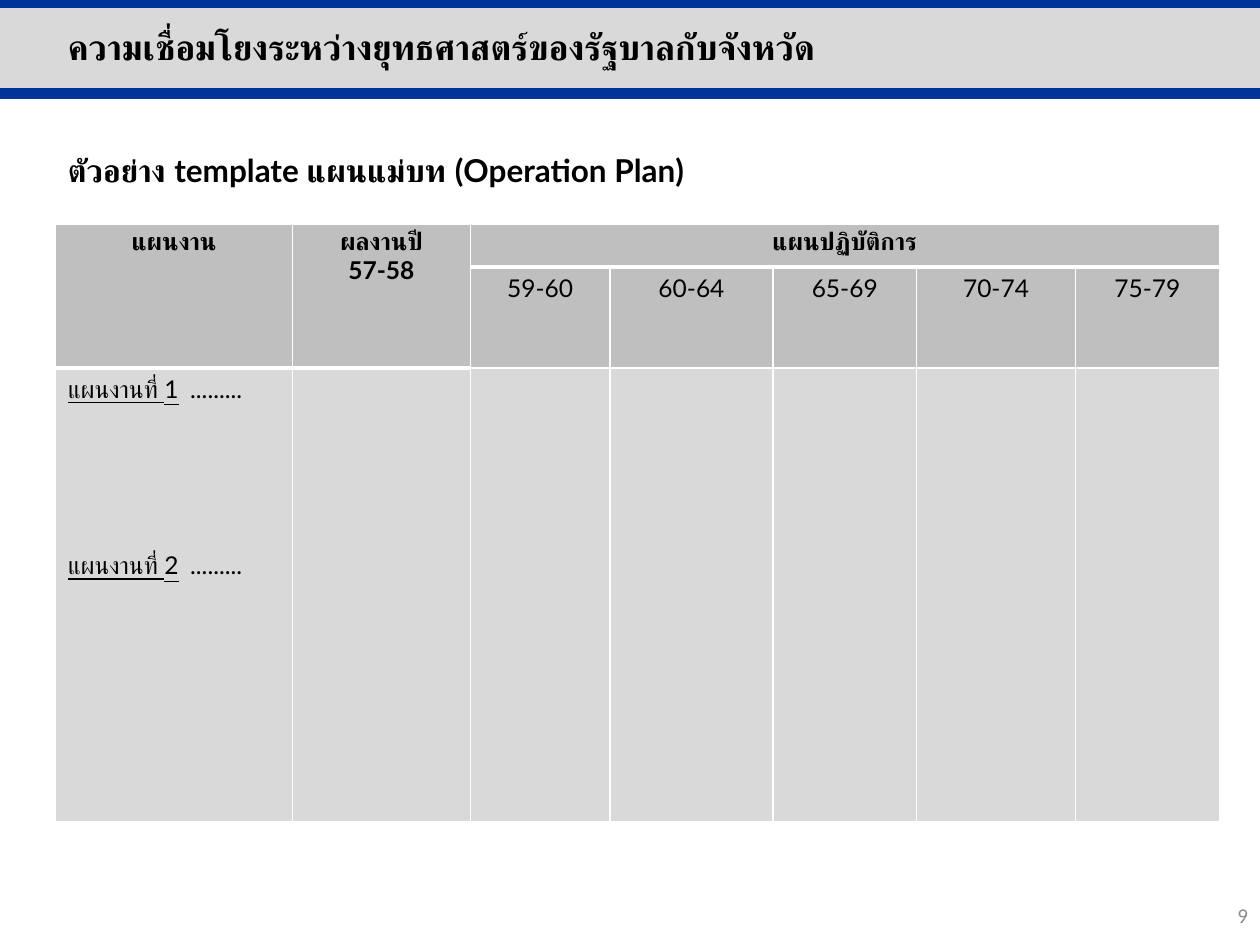
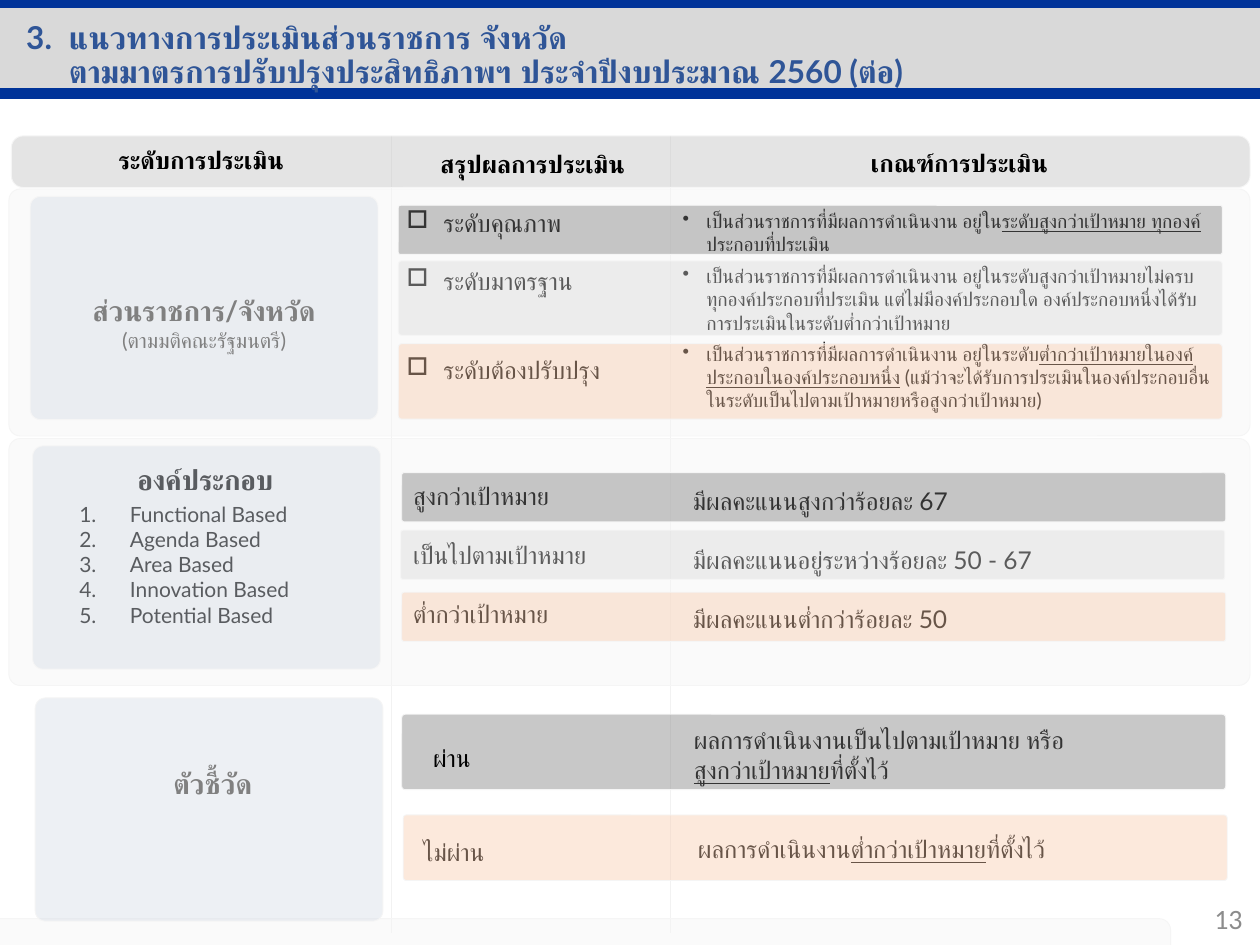
from lxml import etree
from pptx import Presentation
from pptx.dml.color import RGBColor
from pptx.enum.shapes import MSO_CONNECTOR as Connector, MSO_SHAPE as Preset
from pptx.enum.text import MSO_ANCHOR as Anchor, PP_ALIGN as Align
from pptx.oxml.ns import qn
from pptx.util import Cm, Pt

BLACK, WHITE, GREY, BLUE = "000000", "FFFFFF", "808080", "2F5597"
BAND, BAND_LINE, PAGE_NUMBER = "D9D9D9", "003399", "8C8C8C"
HEAD, PANEL, CARD = "BFBFBF", "F5F5F5", "D6DCE5"
HIGH, MIDDLE, LOW = "7C7C7C", "DBDBDB", "F8CBAD"
LINE_14 = 16.8
CENTER = {"alignment": Align.CENTER}
HEADING = {"alignment": Align.CENTER, "line_spacing": 1.15}


def color(value):
    """Turn a hex string into a colour."""
    return RGBColor.from_string(value)


def set_values(target, values):
    """Set every attribute named in a dict."""
    for name, value in values.items():
        setattr(target, name, value)


def add_element(parent, tag, **attributes):
    """Append a drawing element with its attributes."""
    return etree.SubElement(parent, qn(tag), attributes)


class Deck:
    """Holds the shared style and the slide being built."""

    def __init__(self):
        """Start an empty 4:3 presentation."""
        self.presentation = Presentation()
        set_values(self.presentation, {"slide_width": Cm(25.4), "slide_height": Cm(19.05)})

    def new_slide(self):
        """Add a blank slide with the title band."""
        self.slide = self.presentation.slides.add_slide(self.presentation.slide_layouts[6])
        self.shape(Preset.RECTANGLE, (0, 0.13, 25.4, 1.73), BAND)
        for y in (1.88, 0.05):
            self.line((0, y, 25.4, y), BAND_LINE, 6)

    def line(self, ends, line_color, width):
        """Draw a straight line without shadow."""
        line = self.slide.shapes.add_connector(Connector.STRAIGHT, *map(Cm, ends))
        line.line.color.rgb = color(line_color)
        line.line.width = Pt(width)
        add_element(line._element.spPr, "a:effectLst")

    def shape(self, preset, box, fill):
        """Draw a plain filled shape."""
        shape = self.slide.shapes.add_shape(preset, *map(Cm, box))
        shape.shadow.inherit = False
        shape.fill.solid()
        shape.fill.fore_color.rgb = color(fill)
        shape.line.fill.background()
        return shape

    def veil(self, box, fill, corner=0.046):
        """Draw a translucent rounded rectangle with a pale outline."""
        shape = self.shape(Preset.ROUNDED_RECTANGLE, box, fill)
        shape.adjustments[0] = corner
        shape.line.color.rgb = color(PANEL)
        shape.line.width = Pt(0.5)
        fill_color = shape._element.spPr.find(qn("a:solidFill"))[0]
        add_element(fill_color, "a:alpha", val="42000")

    def put_text(self, frame, texts, size=14, ink=BLACK, bold=False, font="Lato",
                 layout=None, bullet=None, indent=0, gaps=(), tab=None):
        """Fill a frame; underscores enclose underlined words."""
        for index, text in enumerate(texts):
            paragraph = frame.paragraphs[0] if index == 0 else frame.add_paragraph()
            properties = paragraph._p.get_or_add_pPr()
            if indent:
                properties.set("marL", str(Cm(indent)))
                properties.set("indent", str(-Cm(indent)))
            if bullet == "1.":
                add_element(properties, "a:buAutoNum", type="arabicPeriod")
            elif bullet:
                add_element(properties, "a:buChar", char=bullet)
            if tab:
                stops = add_element(properties, "a:tabLst")
                add_element(stops, "a:tab", pos=str(Cm(tab)), algn="l")
            set_values(paragraph, layout or {})
            if index and gaps:
                paragraph.space_before = Pt(gaps[index - 1])
            for row, line in enumerate(text.split("\n")):
                if row:
                    paragraph.add_line_break()
                for part, words in enumerate(line.split("_")):
                    if not words:
                        continue
                    run = paragraph.add_run()
                    run.text = words
                    set_values(run.font, {"name": font, "size": Pt(size), "bold": bold,
                                          "underline": part % 2 == 1})
                    run.font.color.rgb = color(ink)

    def text(self, box, *texts, wrap=True, anchor=Anchor.TOP, **style):
        """Add a text box."""
        frame = self.slide.shapes.add_textbox(*map(Cm, box)).text_frame
        set_values(frame, {"word_wrap": wrap, "vertical_anchor": anchor})
        self.put_text(frame, texts, **style)

    def page_number(self, box, number, size):
        """Add the page number at the bottom right."""
        self.text(box, number, size=size, ink=PAGE_NUMBER, font="Calibri",
                  anchor=Anchor.MIDDLE, layout={"alignment": Align.RIGHT})

    def table(self, box, widths, heights, merges, head_rows):
        """Add a grey table with white borders."""
        table = self.slide.shapes.add_table(len(heights), len(widths), *map(Cm, box)).table
        for column, width in zip(table.columns, widths):
            column.width = Cm(width)
        for row, height in zip(table.rows, heights):
            row.height = Cm(height)
        for first, last in merges:
            table.cell(*first).merge(table.cell(*last))
        for index, row in enumerate(table.rows):
            for cell in row.cells:
                thick = cell.is_merge_origin or cell.is_spanned
                self.borders(cell, {"a:lnL": 1, "a:lnR": 1, "a:lnB": 3 if thick else 1})
                cell.fill.solid()
                cell.fill.fore_color.rgb = color(HEAD if index < head_rows else BAND)
        return table

    def borders(self, cell, widths):
        """Give a cell white borders."""
        properties = cell._tc.get_or_add_tcPr()
        for tag, width in widths.items():
            border = add_element(properties, tag, w=str(Pt(width)))
            add_element(add_element(border, "a:solidFill"), "a:srgbClr", val=WHITE)


def build_plan_template(deck):
    """Build the operation plan template slide."""
    deck.new_slide()
    deck.page_number((19.69, 17.93, 5.72, 1.02), "9", 12)
    deck.text((1.12, 0.38, 23.72, 1.12), "ความเชื่อมโยงระหว่างยุทธศาสตร์ของรัฐบาลกับจังหวัด",
              size=20, bold=True)
    plan = deck.table((1.12, 4.52, 23.46, 12.04), (4.78, 3.58, 2.82, 3.28, 2.9, 3.2, 2.9),
                      (0.86, 2.04, 9.14),
                      (((0, 0), (1, 0)), ((0, 1), (1, 1)), ((0, 2), (0, 6))), 2)
    headings = (["แผนงาน"], ["ผลงานปี", "57-58"], ["แผนปฏิบัติการ"])
    for column, heading in enumerate(headings):
        deck.put_text(plan.cell(0, column).text_frame, heading, bold=True, layout=CENTER)
    for column, years in enumerate(("59-60", "60-64", "65-69", "70-74", "75-79"), 2):
        deck.put_text(plan.cell(1, column).text_frame, [years], layout=CENTER)
    deck.put_text(plan.cell(2, 0).text_frame,
                  [f"_แผนงานที่ {number}_\t........." for number in (1, 2)],
                  gaps=[5 * LINE_14], tab=2.46)
    deck.text((1.12, 2.92, 14.68, 1.02), "ตัวอย่าง template แผนแม่บท (Operation Plan)",
              size=18, bold=True, wrap=False)


def build_assessment(deck):
    """Build the assessment levels and criteria slide."""
    deck.new_slide()
    deck.text((13.82, 16.69, 9.91, 0.86), "ผลการดำเนินงาน_ต่ำกว่าเป้าหมาย_ที่ตั้งไว้")
    for x in (13.51, 7.9):
        deck.line((x, 2.74, x, 18.8), "F2F2F2", 0.5)
    for left, top in ((-1.42, 18.52), (0.18, 8.84), (0.18, 3.81)):
        deck.veil((left, top, 25.02, 4.98), PANEL)
    deck.veil((0.23, 2.74, 24.97, 1.04), HEAD, 0.228)
    deck.page_number((19.38, 18.01, 5.92, 1.02), "13", 16)
    for left, top, width, heading in ((15.44, 2.77, 7.8, "เกณฑ์การประเมิน"),
                                      (7.59, 2.79, 6.3, "สรุปผลการประเมิน"),
                                      (0.51, 2.72, 7.09, "ระดับการประเมิน")):
        deck.text((left, top, width, 0.86), heading, bold=True, layout=HEADING)

    deck.text((13.72, 9.68, 9.91, 3.25), "มีผลคะแนนสูงกว่าร้อยละ 67",
              "มีผลคะแนนอยู่ระหว่างร้อยละ 50 - 67", "มีผลคะแนนต่ำกว่าร้อยละ 50",
              gaps=[LINE_14] * 2)
    deck.text((8.08, 9.58, 6.76, 3.25), "สูงกว่าเป้าหมาย", "เป็นไปตามเป้าหมาย",
              "ต่ำกว่าเป้าหมาย", gaps=[LINE_14] * 2)
    deck.text((2.31, 9.09, 3.66, 0.97), "องค์ประกอบ", size=16, bold=True, wrap=False,
              layout=HEADING)
    bases = ("Functional", "Agenda", "Area", "Innovation", "Potential")
    deck.text((1.35, 9.98, 6.14, 2.82), *(f"{base} Based" for base in bases),
              size=12, bullet="1.", indent=1.02)
    for left, top in ((0.66, 8.99), (0.61, 3.96), (0.71, 14.07)):
        deck.veil((left, top, 7.01, 4.5), CARD)
    deck.text((0.23, 5.79, 7.77, 1.1), "ส่วนราชการ/จังหวัด", size=16, ink=GREY, bold=True,
              layout=CENTER)
    deck.text((0.23, 6.47, 7.77, 0.8), "(ตามมติคณะรัฐมนตรี)", size=12, ink=GREY,
              layout=CENTER)
    deck.text((1.09, 15.32, 6.4, 1.63), "ตัวชี้วัด", size=16, ink=GREY, bold=True,
              layout=CENTER)

    deck.text((7.95, 4.06, 5.56, 3.84), "ระดับคุณภาพ", "ระดับมาตรฐาน", "ระดับต้องปรับปรุง",
              bullet="□", indent=0.74, gaps=[LINE_14, 2 * LINE_14])
    criteria = (
        (4.09, 1.19, "เป็นส่วนราชการที่มีผลการดำเนินงาน อยู่ใน"
                     "_ระดับสูงกว่าเป้าหมาย ทุกองค์ประกอบที่ประเมิน_"),
        (5.21, 1.68, "เป็นส่วนราชการที่มีผลการดำเนินงาน อยู่ในระดับสูงกว่าเป้าหมายไม่ครบ"
                     "ทุกองค์ประกอบที่ประเมิน แต่ไม่มีองค์ประกอบใด องค์ประกอบหนึ่งได้รับ"
                     "การประเมินในระดับต่ำกว่าเป้าหมาย"),
        (6.78, 1.68, "เป็นส่วนราชการที่มีผลการดำเนินงาน อยู่ในระดับ"
                     "_ต่ำกว่าเป้าหมายในองค์ประกอบในองค์ประกอบหนึ่ง_"
                     " (แม้ว่าจะได้รับการประเมินในองค์ประกอบอื่น"
                     "ในระดับเป็นไปตามเป้าหมายหรือสูงกว่าเป้าหมาย)"))
    for top, height, criterion in criteria:
        deck.text((13.51, top, 11.18, height), criterion, size=11, bullet="•", indent=0.48)
    deck.text((8.28, 16.74, 5.61, 0.86), "ไม่ผ่าน")
    deck.text((13.74, 14.5, 9.91, 1.45), "ผลการดำเนินงานเป็นไปตามเป้าหมาย หรือ",
              "_สูงกว่าเป้าหมาย_ที่ตั้งไว้")

    for left, top, height, fill in (
            (8.08, 10.69, 0.99, MIDDLE), (8.1, 9.53, 0.99, HIGH), (8.1, 11.94, 0.99, LOW),
            (8.1, 14.4, 1.52, HIGH), (8.03, 5.26, 1.5, MIDDLE), (8.03, 4.14, 0.99, HIGH),
            (8.03, 6.93, 1.52, LOW), (8.13, 16.43, 1.32, LOW)):
        deck.veil((left, top, 16.61, height), fill)
    deck.text((8.48, 14.86, 5.61, 0.86), "ผ่าน")
    deck.text((0.28, 0.33, 23.72, 1.65),
              "3.\tแนวทางการประเมินส่วนราชการ จังหวัด\n"
              "ตามมาตรการปรับปรุงประสิทธิภาพฯ ประจำปีงบประมาณ 2560 (ต่อ)",
              size=18, ink=BLUE, bold=True, indent=0.86, layout={"line_spacing": 0.9})


def main():
    """Build and save both slides."""
    deck = Deck()
    build_plan_template(deck)
    build_assessment(deck)
    deck.presentation.save("out.pptx")


if __name__ == "__main__":
    main()
